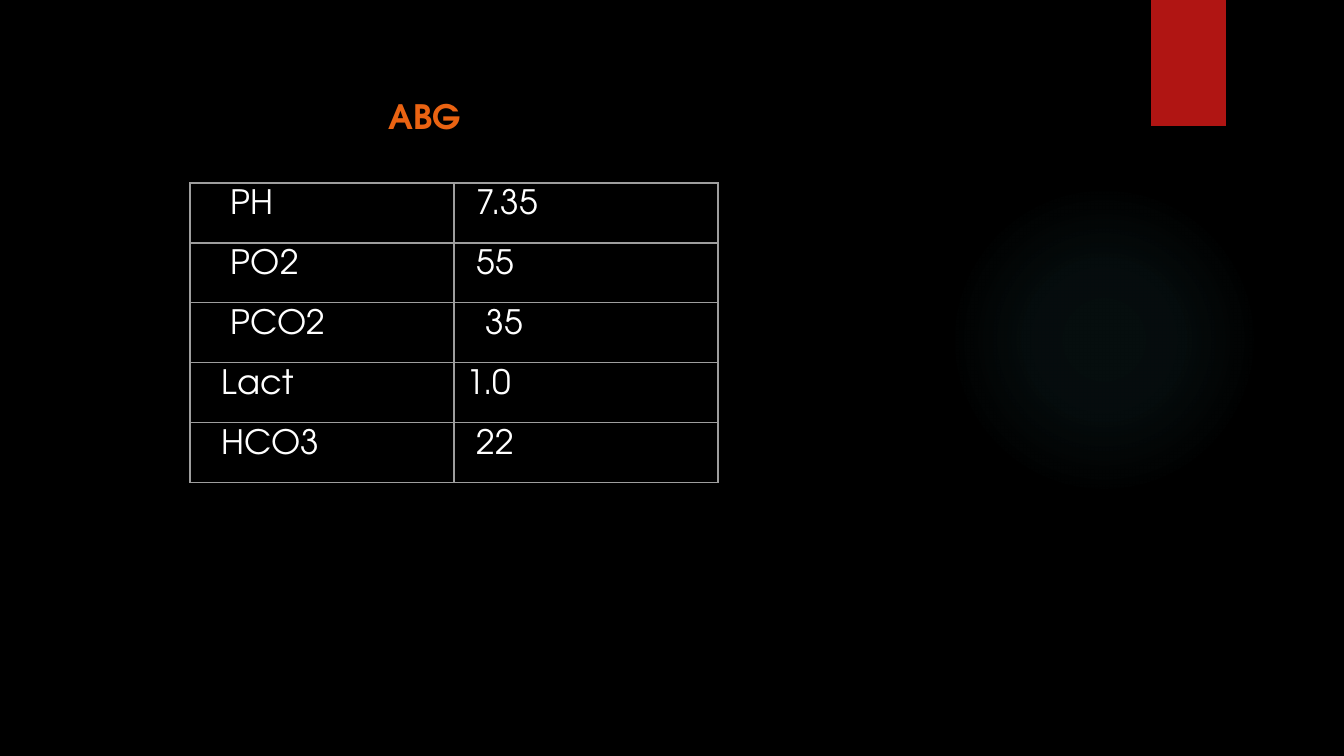
from typing import NamedTuple

from lxml.etree import SubElement
from pptx import Presentation
from pptx.dml.color import RGBColor
from pptx.enum.shapes import MSO_SHAPE as Preset
from pptx.enum.text import MSO_ANCHOR as Anchor, MSO_AUTO_SIZE as AutoSize, PP_ALIGN as Align
from pptx.oxml.ns import qn
from pptx.util import Emu, Pt

BLACK = RGBColor(0x00, 0x00, 0x00)
WHITE = RGBColor(0xFF, 0xFF, 0xFF)
RED = RGBColor(0xB0, 0x15, 0x13)
ORANGE = RGBColor(0xEA, 0x63, 0x12)
TEAL = RGBColor(0x50, 0xB9, 0xC1)
GREY = RGBColor(0x9E, 0x9E, 0x9E)

FONT = "TeX Gyre Adventor"
TEXT_SIZE = Pt(18)
PX_PER_INCH = 134.4
COLUMN_WIDTH, ROW_HEIGHT = 264, 60
CELL_TOP_MARGIN = 9


class Box(NamedTuple):
    left: int
    top: int
    width: int
    height: int


class Reading(NamedTuple):
    name: str
    value: str
    name_indent: int
    value_indent: int


READINGS = [
    Reading("PH", "7.35", 41, 23),
    Reading("PO2", "55", 41, 23),
    Reading("PCO2", "35", 41, 32),
    Reading("Lact", "1.0", 32, 13),
    Reading("HCO3", "22", 32, 23),
]


def px(length: int) -> Emu:
    return Emu(round(length * 914400 / PX_PER_INCH))


def place(box: Box) -> list[Emu]:
    return [px(length) for length in box]


def style(paragraph, color: RGBColor, bold: bool = False) -> None:
    paragraph.alignment = Align.LEFT
    font = paragraph.font
    font.name, font.size, font.bold = FONT, TEXT_SIZE, bold
    font.color.rgb = color


def add_plain_shape(slide, preset: Preset, box: Box, color: RGBColor):
    shape = slide.shapes.add_shape(preset, *place(box))
    shape.shadow.inherit = False
    shape.fill.solid()
    shape.fill.fore_color.rgb = color
    shape.line.fill.background()
    return shape


def add_glow(slide, box: Box, stops: list[tuple[int, int]]) -> None:
    """Draw a circle whose opacity fades outwards; stops are percent pairs."""
    shape = add_plain_shape(slide, Preset.OVAL, box, TEAL)
    properties = shape.fill._xPr
    solid = properties.find(qn("a:solidFill"))
    gradient = SubElement(properties, qn("a:gradFill"), rotWithShape="1")
    properties.replace(solid, gradient)
    stop_list = SubElement(gradient, qn("a:gsLst"))
    for position, opacity in stops:
        stop = SubElement(stop_list, qn("a:gs"), pos=str(position * 1000))
        color = SubElement(stop, qn("a:srgbClr"), val=str(TEAL))
        SubElement(color, qn("a:alpha"), val=str(opacity * 1000))
    circle = SubElement(gradient, qn("a:path"), {"path": "circle"})
    SubElement(circle, qn("a:fillToRect"), l="50000", t="50000", r="50000", b="50000")


def add_borders(cell) -> None:
    properties = cell._tc.get_or_add_tcPr()
    for index, side in enumerate(("lnL", "lnR", "lnT", "lnB")):
        line = SubElement(properties, qn(f"a:{side}"), w=str(Pt(0.75)))
        fill = SubElement(line, qn("a:solidFill"))
        SubElement(fill, qn("a:srgbClr"), val=str(GREY))
        properties.insert(index, line)


def fill_cell(cell, text: str, indent: int) -> None:
    cell.margin_left = px(indent)
    cell.margin_top = px(CELL_TOP_MARGIN)
    cell.margin_bottom = 0
    cell.vertical_anchor = Anchor.TOP
    cell.fill.background()
    add_borders(cell)
    cell.text = text
    paragraph = cell.text_frame.paragraphs[0]
    paragraph.line_spacing = 0.9
    style(paragraph, WHITE)


def add_readings_table(slide, left: int, top: int) -> None:
    box = Box(left, top, 2 * COLUMN_WIDTH, len(READINGS) * ROW_HEIGHT)
    table = slide.shapes.add_table(len(READINGS), 2, *place(box)).table
    table.first_row = table.horz_banding = False
    for column in table.columns:
        column.width = px(COLUMN_WIDTH)
    for index, reading in enumerate(READINGS):
        table.rows[index].height = px(ROW_HEIGHT)
        fill_cell(table.cell(index, 0), reading.name, reading.name_indent)
        fill_cell(table.cell(index, 1), reading.value, reading.value_indent)


def set_title(slide, text: str, box: Box) -> None:
    title = slide.shapes.title
    title.left, title.top, title.width, title.height = place(box)
    frame = title.text_frame
    frame.text = text
    frame.word_wrap = True
    frame.auto_size = AutoSize.SHAPE_TO_FIT_TEXT
    frame.vertical_anchor = Anchor.TOP
    style(frame.paragraphs[0], ORANGE, bold=True)


def main() -> None:
    presentation = Presentation()
    presentation.slide_width, presentation.slide_height = px(1344), px(756)
    slide = presentation.slides.add_slide(presentation.slide_layouts[5])
    slide.background.fill.solid()
    slide.background.fill.fore_color.rgb = BLACK

    # Decoration
    add_glow(slide, Box(949, 185, 310, 310), [(0, 7), (36, 6), (69, 0)])
    add_plain_shape(slide, Preset.RECTANGLE, Box(1151, 0, 75, 126), RED)

    # Title and blood gas readings
    set_title(slide, "ABG", Box(375, 89, 672, 54))
    add_readings_table(slide, 190, 183)

    presentation.save("out.pptx")


if __name__ == "__main__":
    main()
